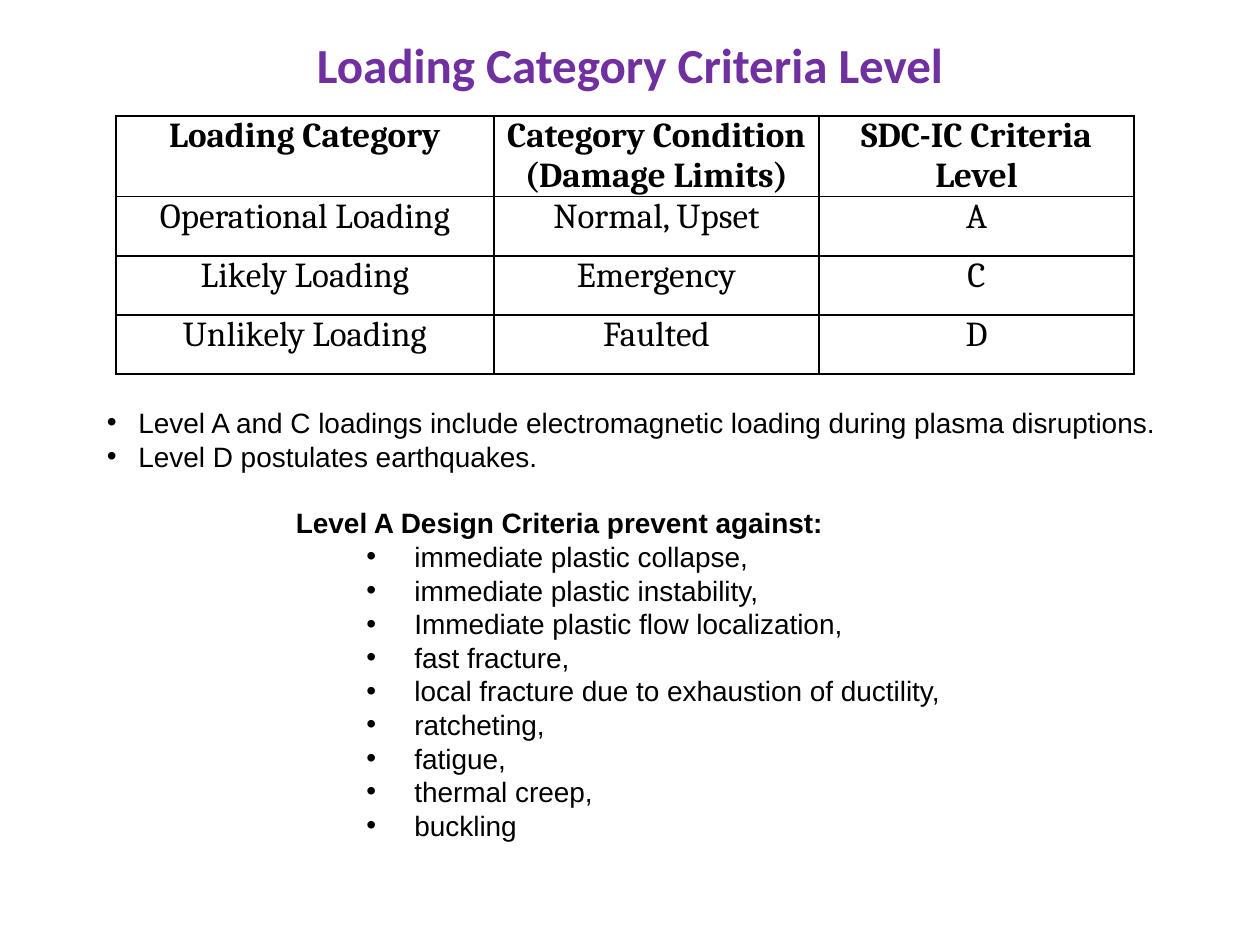
from dataclasses import dataclass

from lxml.etree import SubElement
from pptx import Presentation
from pptx.dml.color import RGBColor as RGB
from pptx.enum.text import MSO_ANCHOR as Anchor, PP_ALIGN as Align
from pptx.oxml.ns import qn
from pptx.util import Inches, Pt


@dataclass(frozen=True)
class Theme:
    purple: str = "7030A0"
    black: str = "000000"
    title_font: str = "Calibri"
    table_font: str = "Cambria"
    body_font: str = "Arial"
    title_size: int = 28
    table_size: int = 20
    body_size: int = 16


class SlideBuilder:
    def __init__(self, prs, theme):
        self.theme = theme
        self.slide = prs.slides.add_slide(prs.slide_layouts[5])

    def style(self, p, name, size, color, bold=False):
        values = {"name": name, "size": Pt(size), "bold": bold}
        for r in p.runs:
            for key, value in values.items():
                setattr(r.font, key, value)
            r.font.color.rgb = RGB.from_string(color)

    def title(self, text, box):
        t = self.theme
        sp = self.slide.shapes.title
        sp.left, sp.top, sp.width, sp.height = map(Inches, box)
        tf = sp.text_frame
        tf.text = text
        tf.vertical_anchor = Anchor.MIDDLE
        p = tf.paragraphs[0]
        p.alignment = Align.CENTER
        self.style(p, t.title_font, t.title_size, t.purple, True)

    def borders(self, cell):
        tc_pr = cell._tc.get_or_add_tcPr()
        for i, side in enumerate(("lnL", "lnR", "lnT", "lnB")):
            ln = SubElement(tc_pr, qn(f"a:{side}"), w=str(Pt(1)))
            fill = SubElement(ln, qn("a:solidFill"))
            SubElement(fill, qn("a:srgbClr"), val=self.theme.black)
            tc_pr.remove(ln)
            tc_pr.insert(i, ln)

    def table(self, rows, box, widths, heights):
        t = self.theme
        frame = self.slide.shapes.add_table(len(rows), len(widths), *map(Inches, box))
        table = frame.table
        table.horz_banding = False
        for col, width in zip(table.columns, widths):
            col.width = Inches(width)
        for row, height in zip(table.rows, heights):
            row.height = Inches(height)
        margins = {"margin_left": 0.06, "margin_right": 0.06,
                   "margin_top": 0, "margin_bottom": 0}
        for i, row in enumerate(rows):
            for j, text in enumerate(row):
                cell = table.cell(i, j)
                cell.text = text
                cell.fill.background()
                for key, value in margins.items():
                    setattr(cell, key, Inches(value))
                p = cell.text_frame.paragraphs[0]
                p.alignment = Align.CENTER
                p.space_after = Pt(5)
                self.style(p, t.table_font, t.table_size, t.black, i == 0)
                self.borders(cell)

    def indent(self, p, left, hanging, bullet):
        p_pr = p._p.get_or_add_pPr()
        p_pr.set("marL", str(Inches(left)))
        p_pr.set("indent", str(-Inches(hanging)))
        if bullet:
            SubElement(p_pr, qn("a:buFont"), typeface=self.theme.body_font)
            SubElement(p_pr, qn("a:buChar"), char="•")
        else:
            SubElement(p_pr, qn("a:buNone"))

    def body(self, groups, box):
        t = self.theme
        tf = self.slide.shapes.add_textbox(*map(Inches, box)).text_frame
        tf.word_wrap = True
        tf.vertical_anchor = Anchor.TOP
        items = [(text, fmt) for lines, fmt in groups for text in lines]
        for i, (text, fmt) in enumerate(items):
            p = tf.add_paragraph() if i else tf.paragraphs[0]
            p.add_run().text = text
            p.level = fmt["level"]
            self.indent(p, fmt["left"], fmt["hanging"], fmt["bullet"])
            if fmt["before"]:
                p.space_before = Pt(fmt["before"])
            self.style(p, t.body_font, t.body_size, t.black, fmt["bold"])


LOADINGS = [
    ("Loading Category", "Category Condition (Damage Limits)", "SDC-IC Criteria Level"),
    ("Operational Loading", "Normal, Upset", "A"),
    ("Likely Loading", "Emergency", "C"),
    ("Unlikely Loading", "Faulted", "D"),
]
NOTES = [
    "Level A and C loadings include electromagnetic loading during plasma disruptions.",
    "Level D postulates earthquakes.",
]
HEADING = ["Level A Design Criteria prevent against:"]
FAILURES = [
    "immediate plastic collapse,",
    "immediate plastic instability,",
    "Immediate plastic flow localization,",
    "fast fracture,",
    "local fracture due to exhaustion of ductility,",
    "ratcheting,",
    "fatigue,",
    "thermal creep,",
    "buckling",
]
NOTE_FORMAT = dict(level=0, left=0.25, hanging=0.25, bullet=True, bold=False, before=0)
HEADING_FORMAT = dict(level=3, left=1.75, hanging=0.25, bullet=False, bold=True, before=19)
FAILURE_FORMAT = dict(level=3, left=2.44, hanging=0.38, bullet=True, bold=False, before=0)


def main():
    prs = Presentation()
    prs.slide_width, prs.slide_height = Inches(10), Inches(7.5)
    s = SlideBuilder(prs, Theme())
    s.title("Loading Category Criteria Level", (0, 0.17, 10, 0.67))
    s.table(LOADINGS, (0.92, 0.92, 8.08, 1.98), (3, 2.58, 2.5), (0.57, 0.47, 0.47, 0.47))
    s.body([(NOTES, NOTE_FORMAT), (HEADING, HEADING_FORMAT), (FAILURES, FAILURE_FORMAT)],
           (0.75, 3.17, 8.92, 3.87))
    prs.save("out.pptx")


if __name__ == "__main__":
    main()
